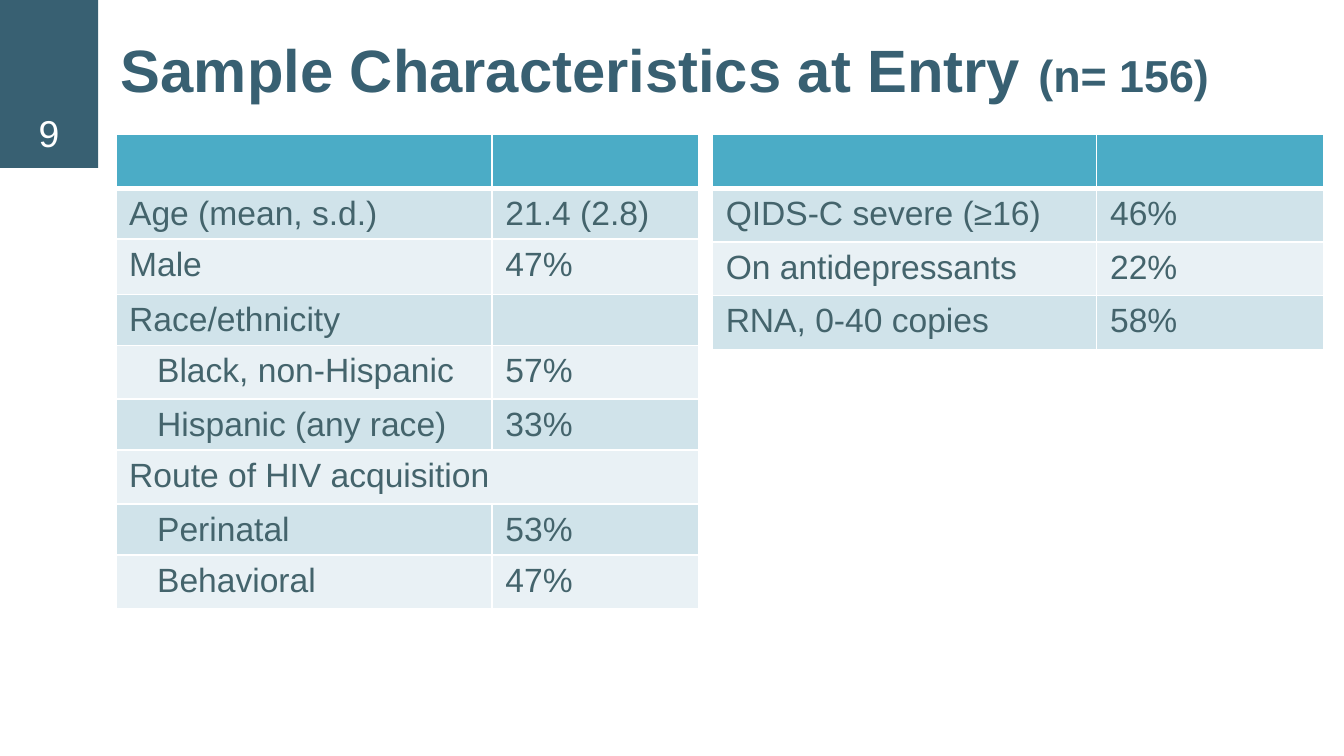
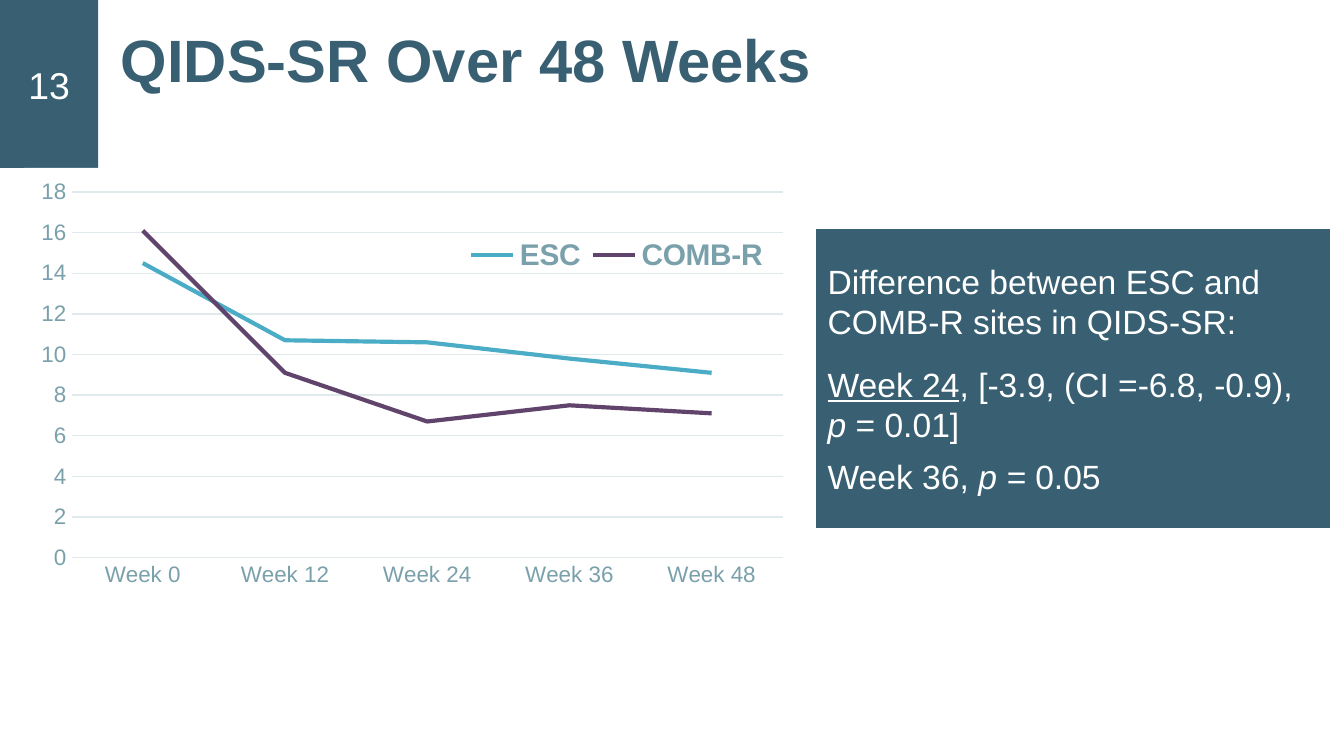
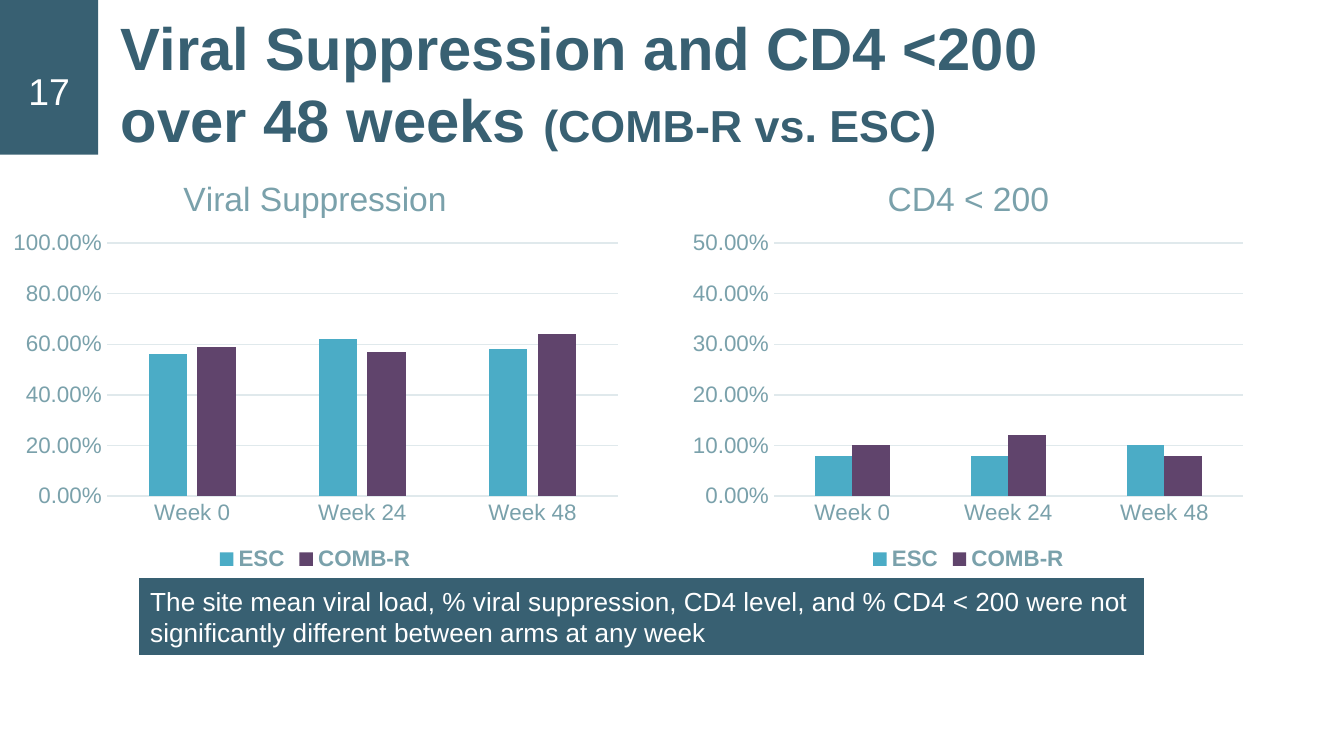
from pptx import Presentation
from pptx import util as u
from pptx.chart.data import CategoryChartData
from pptx.dml.color import RGBColor
from pptx.enum import chart as charts, shapes, text
from pptx.oxml import parse_xml
from pptx.oxml.ns import nsdecls, qn

Pt = u.Pt

FONT = "Arial"
NAVY = RGBColor(0x38, 0x60, 0x72)
WHITE = RGBColor(0xFF, 0xFF, 0xFF)
TEAL = RGBColor(0x4B, 0xAC, 0xC6)
PLUM = RGBColor(0x60, 0x44, 0x6C)
BODY_GRAY = RGBColor(0x44, 0x64, 0x6C)
CHART_GRAY = RGBColor(0x7A, 0xA1, 0xAB)
GRID = RGBColor(0xE0, 0xE9, 0xEC)
ROW_DARK = RGBColor(0xD0, 0xE3, 0xEA)
ROW_LIGHT = RGBColor(0xE9, 0xF1, 0xF5)

INSET = 7.2
BAND_WIDTH, BAND_HEIGHT = 52.6, 90
SERIES_COLORS = (TEAL, PLUM)


def style_font(font, size, color, bold=False):
    font.name = FONT
    font.size = Pt(size)
    font.color.rgb = color
    font.bold = bold


def place(shape, left, top, width, height):
    shape.left, shape.top = Pt(left), Pt(top)
    shape.width, shape.height = Pt(width), Pt(height)


def set_frame(shape, anchor):
    frame = shape.text_frame
    frame.word_wrap = True
    frame.auto_size = text.MSO_AUTO_SIZE.NONE
    frame.vertical_anchor = anchor
    frame.margin_left = frame.margin_right = Pt(INSET)
    frame.margin_top = frame.margin_bottom = Pt(INSET)
    return frame


def add_block(slide, left, top, width, height):
    block = slide.shapes.add_shape(
        shapes.MSO_SHAPE.RECTANGLE, Pt(left), Pt(top), Pt(width), Pt(height))
    block.shadow.inherit = False
    block.fill.solid()
    block.fill.fore_color.rgb = NAVY
    return block


def add_titled_slide(presentation, title, detail, title_box, number, number_box):
    """Add a slide with the corner band, its number and a title ending in a smaller detail."""
    slide = presentation.slides.add_slide(presentation.slide_layouts[5])
    band = add_block(slide, 0, 0, BAND_WIDTH, BAND_HEIGHT)
    band.line.fill.background()

    heading = slide.shapes.title
    place(heading, *title_box)
    paragraph = set_frame(heading, text.MSO_ANCHOR.BOTTOM).paragraphs[0]
    paragraph.text = title
    paragraph.alignment = text.PP_ALIGN.LEFT
    style_font(paragraph.font, 32, NAVY, bold=True)
    if detail:
        run = paragraph.add_run()
        run.text = detail
        run.font.size = Pt(24)

    top, height = number_box
    label = slide.shapes.add_textbox(0, Pt(top), Pt(BAND_WIDTH), Pt(height))
    paragraph = set_frame(label, text.MSO_ANCHOR.BOTTOM).paragraphs[0]
    paragraph.text = number
    paragraph.alignment = text.PP_ALIGN.CENTER
    style_font(paragraph.font, 20, WHITE)
    return slide


def add_note(slide, box, size, paragraphs):
    """Add a filled note; each paragraph is (space after, [(text, font flag or None)])."""
    note = add_block(slide, *box)
    note.line.color.rgb = WHITE
    note.line.width = Pt(2)
    frame = set_frame(note, text.MSO_ANCHOR.MIDDLE)
    for index, (space_after, runs) in enumerate(paragraphs):
        paragraph = frame.add_paragraph() if index else frame.paragraphs[0]
        paragraph.alignment = text.PP_ALIGN.LEFT
        paragraph.space_before = Pt(6)
        paragraph.space_after = Pt(space_after)
        style_font(paragraph.font, size, WHITE)
        for words, flag in runs:
            run = paragraph.add_run()
            run.text = words
            if flag:
                setattr(run.font, flag, True)


def set_borders(cell, bottom):
    properties = cell._tc.get_or_add_tcPr()
    widths = {"lnL": 1, "lnR": 1, "lnT": 1, "lnB": bottom}
    for index, (side, width) in enumerate(widths.items()):
        properties.insert(index, parse_xml(
            f'<a:{side} {nsdecls("a")} w="{Pt(width)}"><a:solidFill>'
            f'<a:srgbClr val="{WHITE}"/></a:solidFill></a:{side}>'))


def add_data_table(slide, left, top, column_widths, row_heights, rows):
    """Add a table with an empty header row; each row is (label, value, indent level).

    A value of None merges the row into one cell.
    """
    table = slide.shapes.add_table(
        len(row_heights), len(column_widths), Pt(left), Pt(top),
        Pt(sum(column_widths)), Pt(sum(row_heights))).table
    for column, width in zip(table.columns, column_widths):
        column.width = Pt(width)
    for row, height in zip(table.rows, row_heights):
        row.height = Pt(height)
    for row_index, (label, value, level) in enumerate([("", "", 0)] + rows):
        fill = TEAL if row_index == 0 else (ROW_LIGHT, ROW_DARK)[row_index % 2]
        for column_index, words in enumerate((label, value)):
            cell = table.cell(row_index, column_index)
            cell.fill.solid()
            cell.fill.fore_color.rgb = fill
            set_borders(cell, 3 if row_index == 0 else 1)
            paragraph = cell.text_frame.paragraphs[0]
            paragraph.text = words or ""
            style_font(paragraph.font, 18, BODY_GRAY)
        table.cell(row_index, 0).margin_left = Pt(INSET + 15 * level)
        if value is None:
            table.cell(row_index, 0).merge(table.cell(row_index, 1))


def set_layout(parent, position, x, y, width, height, inner=False):
    """Fix the place of a chart part, as fractions of the chart."""
    old = parent.find(qn("c:layout"))
    if old is not None:
        parent.remove(old)
    target = '<c:layoutTarget val="inner"/>' if inner else ""
    parent.insert(position, parse_xml(
        f'<c:layout {nsdecls("c")}><c:manualLayout>{target}'
        '<c:xMode val="edge"/><c:yMode val="edge"/>'
        f'<c:x val="{x}"/><c:y val="{y}"/><c:w val="{width}"/><c:h val="{height}"/>'
        '</c:manualLayout></c:layout>'))


def add_arm_chart(slide, kind, box, weeks, arms, plot_area, maximum, step,
                  number_format="General", legend_size=12):
    """Add a chart that compares the study arms by week."""
    data = CategoryChartData(number_format=number_format)
    data.categories = [f"Week {week}" for week in weeks]
    for name, values in arms.items():
        data.add_series(name, values)
    chart = slide.shapes.add_chart(kind, *map(Pt, box), data).chart
    chart.has_title = False
    style_font(chart.font, 10, BODY_GRAY)
    chart.plots[0].vary_by_categories = False

    chart_space = chart._chartSpace
    chart_space.find(qn("c:chart")).addnext(parse_xml(
        f'<c:spPr {nsdecls("c", "a")}><a:solidFill><a:srgbClr val="{WHITE}"/>'
        '</a:solidFill><a:ln><a:noFill/></a:ln></c:spPr>'))
    set_layout(chart_space.chart.plotArea, 0, *plot_area, inner=True)

    for axis in (chart.category_axis, chart.value_axis):
        axis.major_tick_mark = axis.minor_tick_mark = charts.XL_TICK_MARK.NONE
        style_font(axis.tick_labels.font, 12, CHART_GRAY)
    value_axis = chart.value_axis
    value_axis.minimum_scale, value_axis.maximum_scale = 0, maximum
    value_axis.major_unit = step
    value_axis.tick_labels.number_format = number_format
    value_axis.tick_labels.number_format_is_linked = False
    value_axis.format.line.fill.background()
    for line in (chart.category_axis.format.line, value_axis.major_gridlines.format.line):
        line.color.rgb = GRID
        line.width = Pt(0.75)

    chart.has_legend = True
    chart.legend.position = charts.XL_LEGEND_POSITION.BOTTOM
    chart.legend.include_in_layout = False
    style_font(chart.legend.font, legend_size, CHART_GRAY, bold=True)
    return chart


def add_line_chart(slide, box, weeks, arms):
    chart = add_arm_chart(slide, charts.XL_CHART_TYPE.LINE, box, weeks, arms,
                          (0.06, 0.05, 0.9, 0.76), 18, 2, legend_size=16)
    set_layout(chart.legend._element, 1, 0.55, 0.13, 0.4, 0.1)
    for series, color in zip(chart.series, SERIES_COLORS):
        series.smooth = False
        series.marker.style = charts.XL_MARKER_STYLE.NONE
        series.format.line.color.rgb = color
        series.format.line.width = Pt(2.25)


def add_column_chart(slide, title, box, weeks, arms, plot_area, maximum, step, overlap):
    chart = add_arm_chart(slide, charts.XL_CHART_TYPE.COLUMN_CLUSTERED, box, weeks, arms,
                          plot_area, maximum, step, number_format="0.00%")
    chart.has_title = True
    paragraph = chart.chart_title.text_frame.paragraphs[0]
    paragraph.text = title
    style_font(paragraph.font, 18, CHART_GRAY)
    chart.plots[0].gap_width = 219
    chart.plots[0].overlap = overlap
    for series, color in zip(chart.series, SERIES_COLORS):
        series.format.fill.solid()
        series.format.fill.fore_color.rgb = color


def build_sample_slide(presentation):
    slide = add_titled_slide(presentation, "Sample Characteristics at Entry ", "(n= 156)",
                             (57.6, 0, 648, 63.4), "9", (0, 90))
    add_data_table(
        slide, 62, 72, (201.6, 110.9),
        (28.8, 24.5, 29.5, 25.9, 28.8, 25.2, 28.8, 23, 28.8),
        [("Age (mean, s.d.)", "21.4 (2.8)", 0),
         ("Male", "47%", 0),
         ("Race/ethnicity", "", 0),
         ("Black, non-Hispanic", "57%", 1),
         ("Hispanic (any race)", "33%", 1),
         ("Route of HIV acquisition", None, 0),
         ("Perinatal", "53%", 1),
         ("Behavioral", "47%", 1)])
    add_data_table(
        slide, 381.6, 72, (205.9, 121.7), (28.8,) * 4,
        [("QIDS-C severe (≥16)", "46%", 0),
         ("On antidepressants", "22%", 0),
         ("RNA, 0-40 copies", "58%", 0)])


def build_qids_slide(presentation):
    slide = add_titled_slide(presentation, "QIDS-SR Over 48 Weeks", "",
                             (57.6, -10, 648, 67.6), "13", (-8, 72.7))
    add_note(slide, (436.3, 121.7, 277.2, 162), 18, [
        (6, [("Difference between ESC and COMB-R sites in QIDS-SR:", None)]),
        (0, [("Week 24", "underline"), (", [-3.9, (CI =-6.8, -0.9), ", None),
             ("p", "italic"), (" = 0.01]", None)]),
        (0, [("Week 36, ", None), ("p = ", "italic"), ("0.05", None)])])
    add_line_chart(slide, (13, 90, 423.3, 257.8), range(0, 49, 12),
                   {"ESC": (14.5, 10.7, 10.6, 9.8, 9.1),
                    "COMB-R": (16.1, 9.1, 6.7, 7.5, 7.1)})


def build_suppression_slide(presentation):
    slide = add_titled_slide(presentation, "Viral Suppression and CD4 <200\vover 48 weeks ",
                             "(COMB-R vs. ESC)", (57.6, 0, 648, 90), "17", (0, 67.7))
    add_note(slide, (73.4, 308.9, 540.7, 43.2), 14, [
        (0, [("The site mean viral load, % viral suppression, CD4 level, and % CD4 < 200 "
              "were not significantly different between arms at any week", None)])])
    weeks = range(0, 49, 24)
    add_column_chart(slide, "CD4 < 200", (365.8, 82.8, 306, 226), weeks,
                     {"ESC": (0.08, 0.08, 0.1), "COMB-R": (0.1, 0.12, 0.08)},
                     (0.16, 0.21, 0.82, 0.6), 0.5, 0.1, 0)
    add_column_chart(slide, "Viral Suppression", (0, 82.8, 337.7, 226), weeks,
                     {"ESC": (0.56, 0.62, 0.58), "COMB-R": (0.59, 0.57, 0.64)},
                     (0.17, 0.21, 0.81, 0.6), 1, 0.2, -27)


def main():
    presentation = Presentation()
    presentation.slide_width, presentation.slide_height = Pt(720), Pt(405)
    build_sample_slide(presentation)
    build_qids_slide(presentation)
    build_suppression_slide(presentation)
    presentation.save("out.pptx")


if __name__ == "__main__":
    main()
